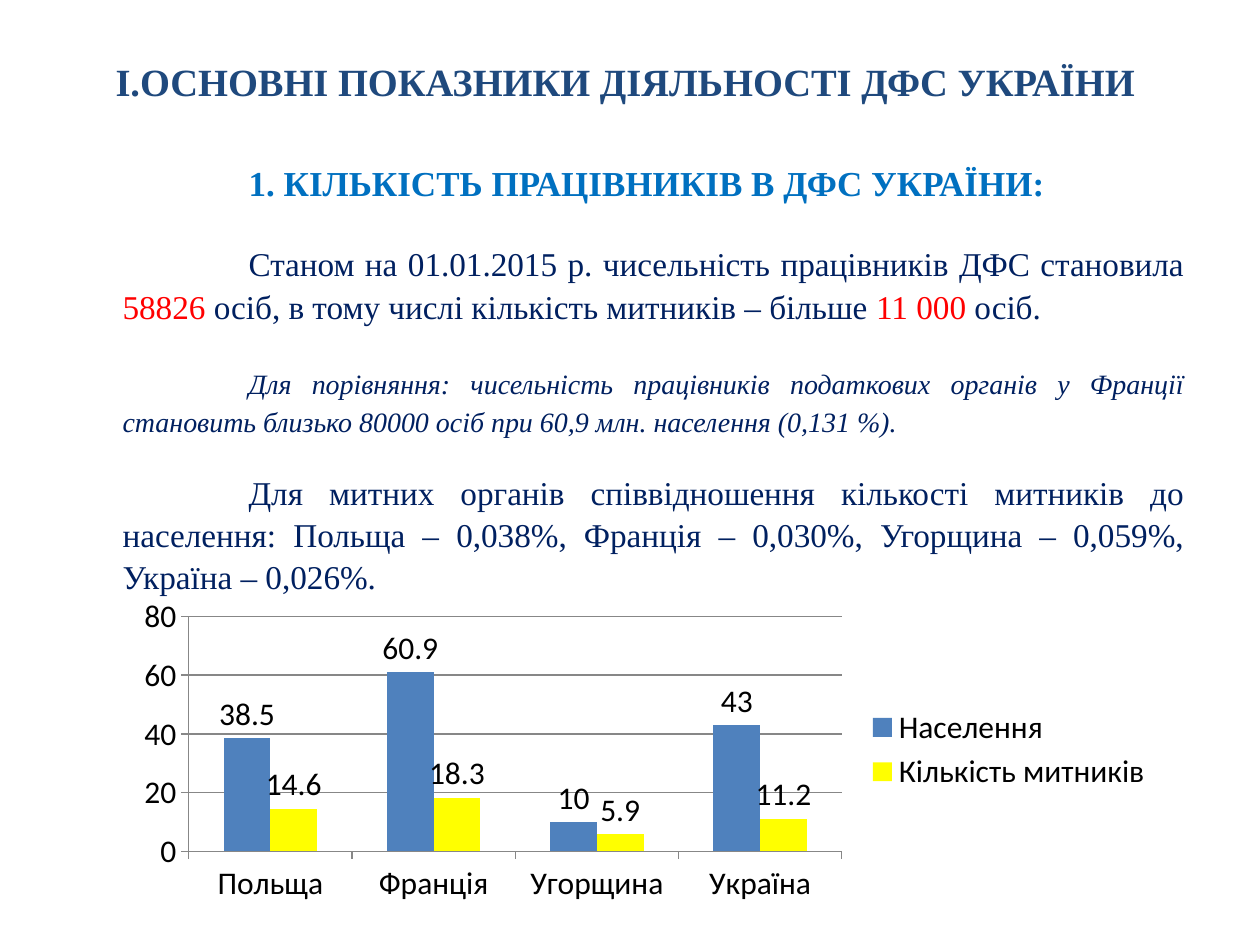
import pptx
import pptx.chart.data
import pptx.dml.color
import pptx.enum.chart
import pptx.enum.text
import pptx.util

Pt = pptx.util.Pt
ALIGN = pptx.enum.text.PP_ALIGN
COLORS = {
    "title": "1F497D",
    "heading": "0070C0",
    "body": "002060",
    "accent": "FF0000",
    "label": "000000",
    "axis": "878787",
    "population": "4F81BD",
    "customs": "FFFF00",
}


def rgb(name):
    """Return the named colour."""
    return pptx.dml.color.RGBColor.from_string(COLORS[name])


def add_text(paragraph, text, size=19, color="body", bold=False, italic=False):
    """Append one formatted run to a paragraph."""
    run = paragraph.add_run()
    run.text = text
    run.font.name = "Times New Roman"
    run.font.size = Pt(size)
    run.font.bold = bold
    run.font.italic = italic
    run.font.color.rgb = rgb(color)


def add_frame(slide, left, top, width, height):
    """Add a wrapping text box and return its text frame."""
    frame = slide.shapes.add_textbox(Pt(left), Pt(top), Pt(width), Pt(height)).text_frame
    frame.word_wrap = True
    return frame


def add_title(slide, left, top, width, height):
    """Place the centred slide title."""
    frame = add_frame(slide, left, top, width, height)
    frame.vertical_anchor = pptx.enum.text.MSO_ANCHOR.MIDDLE
    paragraph = frame.paragraphs[0]
    paragraph.alignment = ALIGN.CENTER
    add_text(paragraph, "І.ОСНОВНІ ПОКАЗНИКИ ДІЯЛЬНОСТІ ДФС УКРАЇНИ ",
             size=22, color="title", bold=True)


def add_body(slide, left, top, width, height):
    """Place the heading and the justified paragraphs."""
    frame = add_frame(slide, left, top, width, height)
    paragraphs = [
        (0, 36, [("1. КІЛЬКІСТЬ ПРАЦІВНИКІВ В ДФС УКРАЇНИ:",
                  dict(size=20, color="heading", bold=True))]),
        (20, 25, [
            ("Станом на 01.01.2015 р. чисельність працівників ДФС становила ", {}),
            ("58826 ", dict(color="accent")),
            ("осіб, в тому числі кількість митників – більше ", {}),
            ("11 000 ", dict(color="accent")),
            ("осіб.", {}),
        ]),
        (20, 22, [("Для порівняння: чисельність працівників податкових органів у Франції "
                   "становить близько 80000 осіб при 60,9 млн. населення (0,131 %).",
                   dict(size=16, italic=True))]),
        (18, 24, [("Для митних органів співвідношення кількості митників до населення: "
                   "Польща – 0,038%, Франція – 0,030%, Угорщина – 0,059%, "
                   "Україна – 0,026%.", {})]),
    ]
    for index, (space_before, line_height, runs) in enumerate(paragraphs):
        paragraph = frame.add_paragraph() if index else frame.paragraphs[0]
        paragraph.alignment = ALIGN.JUSTIFY
        paragraph.space_before = Pt(space_before)
        paragraph.line_spacing = Pt(line_height)
        properties = paragraph._p.get_or_add_pPr()
        properties.set("marL", str(Pt(27)))
        properties.set("indent", str(Pt(72)))
        for text, style in runs:
            add_text(paragraph, text, **style)


def add_staff_chart(slide, left, top, width, height):
    """Place the column chart of population and customs officers."""
    data = pptx.chart.data.CategoryChartData()
    data.categories = ["Польща", "Франція", "Угорщина", "Україна"]
    data.add_series("Населення ", [38.5, 60.9, 10, 43])
    data.add_series("Кількість митників", [14.6, 18.3, 5.9, 11.2])
    chart = slide.shapes.add_chart(
        pptx.enum.chart.XL_CHART_TYPE.COLUMN_CLUSTERED,
        Pt(left), Pt(top), Pt(width), Pt(height), data).chart
    chart.has_title = False
    chart.font.name = "Calibri"
    chart.font.size = Pt(18)
    chart.font.color.rgb = rgb("label")
    chart.has_legend = True
    chart.legend.position = pptx.enum.chart.XL_LEGEND_POSITION.RIGHT
    chart.legend.include_in_layout = False

    value_axis = chart.value_axis
    value_axis.minimum_scale = 0
    value_axis.maximum_scale = 80
    value_axis.major_unit = 20
    value_axis.has_major_gridlines = True
    for line in (value_axis.major_gridlines.format.line, value_axis.format.line,
                 chart.category_axis.format.line):
        line.color.rgb = rgb("axis")
        line.width = Pt(0.75)

    plot = chart.plots[0]
    plot.gap_width = 150
    plot.overlap = 0
    plot.vary_by_categories = False
    for series, color in zip(plot.series, ("population", "customs")):
        series.format.fill.solid()
        series.format.fill.fore_color.rgb = rgb(color)
        series.data_labels.show_value = True
        series.data_labels.position = pptx.enum.chart.XL_LABEL_POSITION.OUTSIDE_END


def main():
    """Build and save the presentation."""
    presentation = pptx.Presentation()
    presentation.slide_width = Pt(720)
    presentation.slide_height = Pt(540)
    slide = presentation.slides.add_slide(presentation.slide_layouts[6])
    add_title(slide, 36, 21.6, 648, 49.7)
    add_body(slide, 36, 77, 648, 442)
    add_staff_chart(slide, 70.6, 337.7, 595.4, 181.4)
    presentation.save("out.pptx")


if __name__ == "__main__":
    main()
